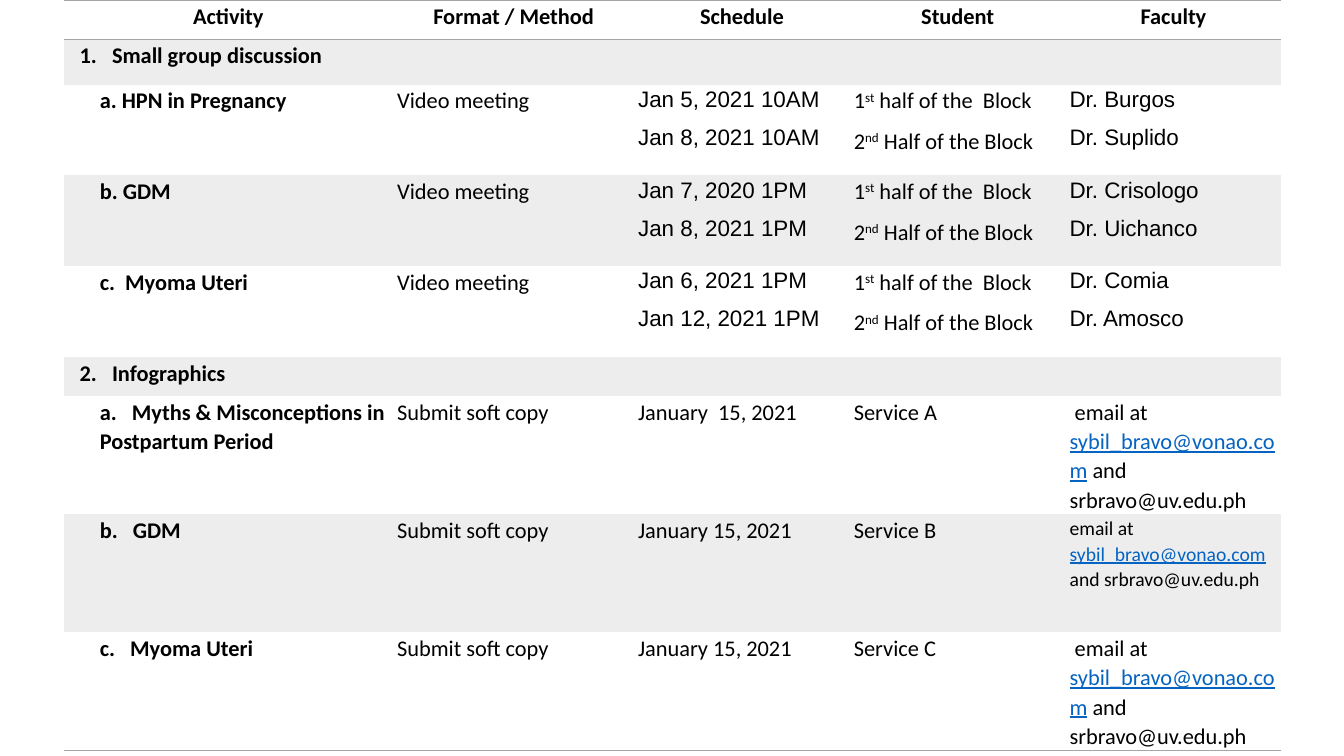
from lxml import etree
from pptx import Presentation
from pptx.dml.color import RGBColor
from pptx.enum.text import PP_ALIGN
from pptx.oxml.ns import qn
from pptx.util import Inches, Pt

BLACK = RGBColor(0x00, 0x00, 0x00)
LINK = RGBColor(0x05, 0x63, 0xC1)
BAND = RGBColor(0xED, 0xED, 0xED)
RULE = RGBColor(0xA5, 0xA5, 0xA5)
NO_STYLE = "{2D5ABB26-0587-4C30-8999-92F81FD0307C}"

# A cell is a list of paragraphs; a paragraph is a list of (text, kind) runs.
HALVES = [
    [("1", ""), ("st", "super"), (" half of the  Block", "")],
    [("2", ""), ("nd", "super"), (" Half of the Block", "")],
]


def email(lead):
    return [[(lead, ""), ("sybil_bravo@vonao.com", "link"), (" and srbravo@uv.edu.ph", "")]]


HEADER = ["Activity", "Format / Method", "Schedule", "Student", "Faculty"]
DISCUSSION = [
    ("a. HPN in Pregnancy", ["Jan 5, 2021 10AM", "Jan 8, 2021 10AM"], ["Dr. Burgos", "Dr. Suplido"]),
    ("b. GDM", ["Jan 7, 2020 1PM", "Jan 8, 2021 1PM"], ["Dr. Crisologo", "Dr. Uichanco"]),
    ("c.  Myoma Uteri", ["Jan 6, 2021 1PM", "Jan 12, 2021 1PM"], ["Dr. Comia", "Dr. Amosco"]),
]
INFOGRAPHICS = [
    ("a.   Myths & Misconceptions in Postpartum Period", "January  15, 2021", "Service A", " email at ", 16),
    ("b.   GDM", "January 15, 2021", "Service B", "email at ", 14),
    ("c.   Myoma Uteri", "January 15, 2021", "Service C", " email at ", 16),
]

LEFT, TOP = 0.63, 0
COL_WIDTHS = [3.27, 2.39, 2.14, 2.14, 2.14]
ROW_HEIGHTS = [0.39, 0.45] + [0.9] * 3 + [0.39] + [1.17] * 3
SECTION_ROWS = {1: "1.   Small group discussion", 5: "2.   Infographics"}
BANDED_ROWS = {1, 3, 5, 7}
SECTION_INDENT, ITEM_INDENT = 0.12, 0.32


def plain(*lines):
    return [[(line, "")] for line in lines]


def write(cell, paragraphs, font="Calibri", size=16, bold=False, indent=0, align=None):
    tf = cell.text_frame
    for i, runs in enumerate(paragraphs):
        p = tf.paragraphs[0] if i == 0 else tf.add_paragraph()
        p.line_spacing, p.space_after = 1.07, Pt(8)
        p.alignment = align
        if indent:
            pPr = p._p.get_or_add_pPr()
            pPr.set("marL", str(Inches(indent)))
            pPr.set("indent", "0")
        for text, kind in runs:
            r = p.add_run()
            r.text = text
            r.font.name, r.font.size, r.font.bold = font, Pt(size), bold
            r.font.color.rgb = LINK if kind == "link" else BLACK
            if kind == "link":
                r.font.underline = True
            elif kind == "super":
                r._r.get_or_add_rPr().set("baseline", "30000")


def add_borders(cell, sides):
    """Draw 1 pt rules; sides are "T" and "B", in that order."""
    tcPr = cell._tc.get_or_add_tcPr()
    for i, side in enumerate(sides):
        ln = etree.Element(qn(f"a:ln{side}"), w=str(Pt(1)))
        fill = etree.SubElement(ln, qn("a:solidFill"))
        etree.SubElement(fill, qn("a:srgbClr"), val=str(RULE))
        tcPr.insert(i, ln)


def format_cells(table):
    last = len(ROW_HEIGHTS) - 1
    for y in range(len(ROW_HEIGHTS)):
        for x in range(len(COL_WIDTHS)):
            cell = table.cell(y, x)
            cell.margin_left = cell.margin_right = Inches(0.04)
            cell.margin_top, cell.margin_bottom = Inches(0.01), 0
            if y in BANDED_ROWS:
                cell.fill.solid()
                cell.fill.fore_color.rgb = BAND
            else:
                cell.fill.background()
            add_borders(cell, {0: "TB", last: "B"}.get(y, ""))


def fill_table(table):
    for x, title in enumerate(HEADER):
        write(table.cell(0, x), plain(title), bold=True, align=PP_ALIGN.CENTER)
    for y, title in SECTION_ROWS.items():
        table.cell(y, 0).merge(table.cell(y, len(COL_WIDTHS) - 1))
        write(table.cell(y, 0), plain(title), bold=True, indent=SECTION_INDENT)
    for y, (activity, dates, doctors) in enumerate(DISCUSSION, 2):
        write(table.cell(y, 0), plain(activity), bold=True, indent=ITEM_INDENT)
        write(table.cell(y, 1), plain("Video meeting"))
        write(table.cell(y, 2), plain(*dates), font="Arial")
        write(table.cell(y, 3), HALVES)
        write(table.cell(y, 4), plain(*doctors), font="Arial")
    for y, (activity, date, service, lead, size) in enumerate(INFOGRAPHICS, 6):
        write(table.cell(y, 0), plain(activity), bold=True, indent=ITEM_INDENT)
        for x, text in enumerate(["Submit soft copy", date, service], 1):
            write(table.cell(y, x), plain(text))
        write(table.cell(y, 4), email(lead), size=size)


def main():
    prs = Presentation()
    prs.slide_width, prs.slide_height = Inches(13.33), Inches(7.5)
    s = prs.slides.add_slide(prs.slide_layouts[6])
    frame = s.shapes.add_table(
        len(ROW_HEIGHTS), len(COL_WIDTHS), Inches(LEFT), Inches(TOP),
        Inches(sum(COL_WIDTHS)), Inches(sum(ROW_HEIGHTS)))
    table = frame.table
    table.first_row = table.horz_banding = False
    table._tbl.tblPr.find(qn("a:tableStyleId")).text = NO_STYLE
    for col, width in zip(table.columns, COL_WIDTHS):
        col.width = Inches(width)
    for row, height in zip(table.rows, ROW_HEIGHTS):
        row.height = Inches(height)
    format_cells(table)
    fill_table(table)
    prs.save("out.pptx")


if __name__ == "__main__":
    main()
